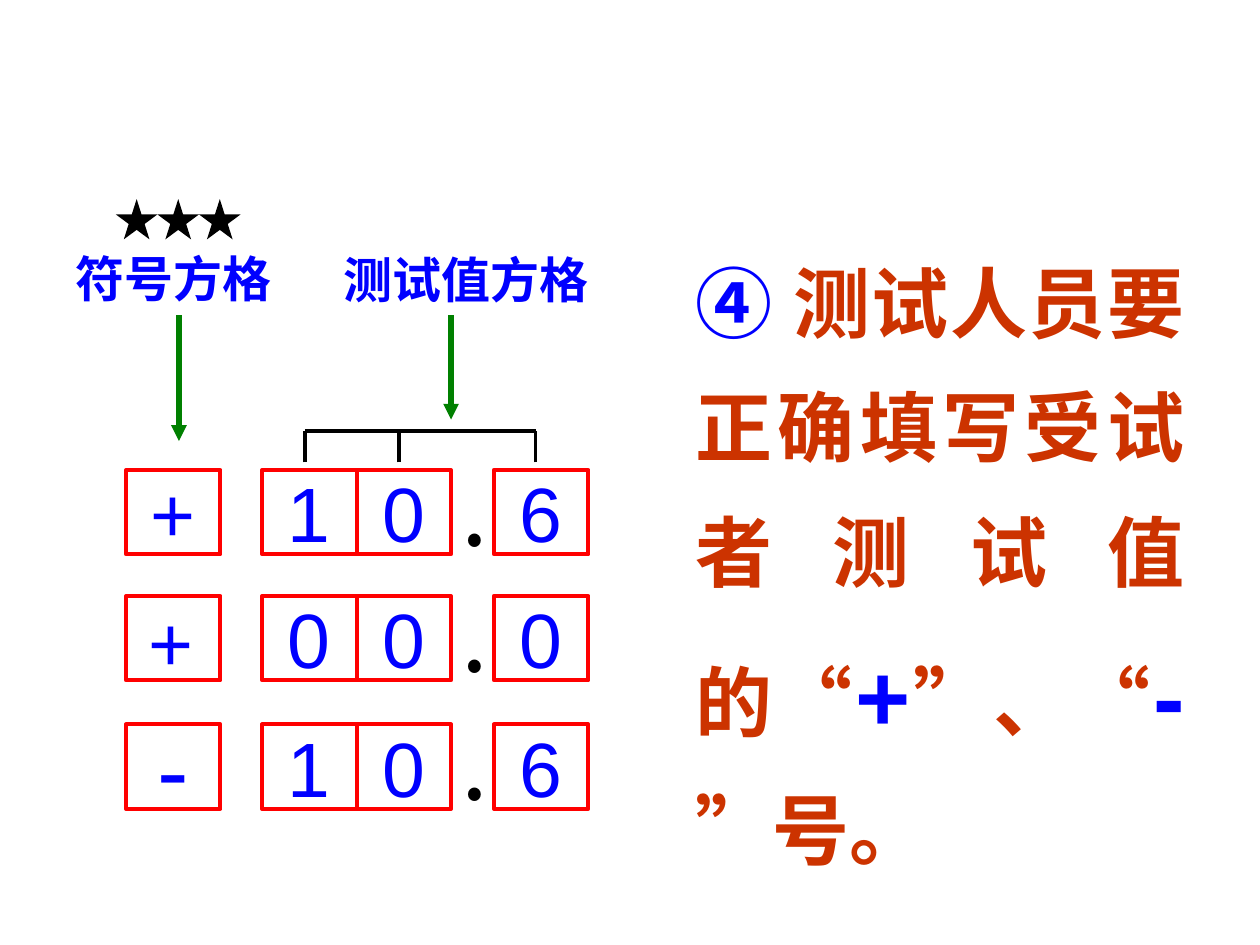
from lxml import etree
from pptx import Presentation
from pptx.dml.color import RGBColor
from pptx.enum.shapes import MSO_CONNECTOR, MSO_SHAPE
from pptx.enum.text import MSO_ANCHOR, PP_ALIGN
from pptx.oxml.ns import qn
from pptx.util import Inches, Pt

RECT, STAR = MSO_SHAPE.RECTANGLE, MSO_SHAPE.STAR_5_POINT
LINE = MSO_CONNECTOR.STRAIGHT
MIDDLE = MSO_ANCHOR.MIDDLE
CENTER, JUSTIFY = PP_ALIGN.CENTER, PP_ALIGN.JUSTIFY
COLORS = {"blue": "0000FF", "red": "FF0000", "rust": "CC3300",
          "green": "008000", "black": "000000"}
LATIN, HAN = "Arial", "Noto Sans CJK SC"


def rgb(name):
    return RGBColor.from_string(COLORS[name])


def style(run, size, color="blue", bold=False, face=LATIN):
    """Format a run, with the Chinese face for Han text and its quotes."""
    font = run.font
    font.size, font.bold, font.name = Pt(size), bold, face
    font.color.rgb = rgb(color)
    if any(ch > "\u2000" for ch in run.text) and "④" not in run.text:
        run._r.get_or_add_rPr().set("lang", "zh-CN")
        etree.SubElement(run._r.rPr, qn("a:ea"), typeface=HAN)


prs = Presentation()
prs.slide_width, prs.slide_height = Inches(10), Inches(7.5)
slide = prs.slides.add_slide(prs.slide_layouts[6])
shapes = slide.shapes

# Instruction on the right
box = shapes.add_textbox(Inches(5.42), Inches(1.72), Inches(4.08), Inches(4.28))
box.text_frame.word_wrap = True
para = box.text_frame.paragraphs[0]
para.alignment, para.line_spacing = JUSTIFY, 1.35
for text, size, color in [
    ("④ ", 44, "blue"),
    ("测试人员要正确填写受试者测试值的“", 44, "rust"),
    ("+", 54, "blue"),
    ("”、“", 44, "rust"),
    ("-", 54, "blue"),
    ("”号。 ", 44, "rust"),
]:
    run = para.add_run()
    run.text = text
    style(run, size, color, True)

# Rows of sign and value boxes
COLS = [1, 2.08, 2.83, 3.92]
ROWS = [(3.73, "+106"), (4.73, " 000"), (5.75, "-106")]
for top, signs in ROWS:
    for left, sign in zip(COLS, signs):
        cell = shapes.add_shape(RECT, Inches(left), Inches(top),
                                Inches(0.75), Inches(0.67))
        cell.shadow.inherit = False
        cell.fill.background()
        cell.line.color.rgb = rgb("red")
        cell.line.width = Pt(2.25)
        if sign.strip():
            frame = cell.text_frame
            frame.word_wrap = False
            frame.vertical_anchor = MIDDLE
            frame.text = sign
            frame.paragraphs[0].alignment = CENTER
            style(frame.paragraphs[0].runs[0], 54 if sign == "-" else 44)

# Decimal points, the loose plus sign and the two headings
LABELS = [(3.58, top, 0.48, 0.77, ".", 40, "black", True, HAN)
          for top, signs in ROWS]
LABELS += [
    (1.08, 4.67, 0.56, 0.83, "+", 44, "blue", False, LATIN),
    (0.5, 1.92, 2.06, 0.57, "符号方格", 28, "blue", True, LATIN),
    (2.63, 1.93, 2.45, 0.57, "测试值方格", 28, "blue", True, LATIN),
]
for left, top, width, height, text, size, color, bold, face in LABELS:
    label = shapes.add_textbox(Inches(left), Inches(top),
                               Inches(width), Inches(height))
    label.text_frame.word_wrap = len(text) > 1
    label.text_frame.text = text
    style(label.text_frame.paragraphs[0].runs[0], size, color, bold, face)

# Green arrows and the black bracket
LINES = [(1.42, 2.5, 1.42, 3.5, "green"), (3.58, 2.5, 3.58, 3.33, "green")]
LINES += [(x, 3.67, x, 3.42, "black") for x in (2.42, 3.17, 4.25)]
LINES += [(2.42, 3.42, 4.25, 3.42, "black")]
for x1, y1, x2, y2, color in LINES:
    line = shapes.add_connector(LINE, Inches(x1), Inches(y1),
                                Inches(x2), Inches(y2))
    line.line.color.rgb = rgb(color)
    line.line.width = Pt(3 if color == "green" else 2.25)
    if color == "green":
        etree.SubElement(line.line._get_or_add_ln(), qn("a:tailEnd"),
                         type="triangle")
    etree.SubElement(line._element.spPr, qn("a:effectLst"))

# Stars
for i in range(3):
    star = shapes.add_shape(STAR, Inches(0.92 + i * 0.33), Inches(1.58),
                            Inches(0.33), Inches(0.32))
    star.shadow.inherit = False
    star.fill.solid()
    star.fill.fore_color.rgb = rgb("black")
    star.line.fill.background()

prs.save("out.pptx")
